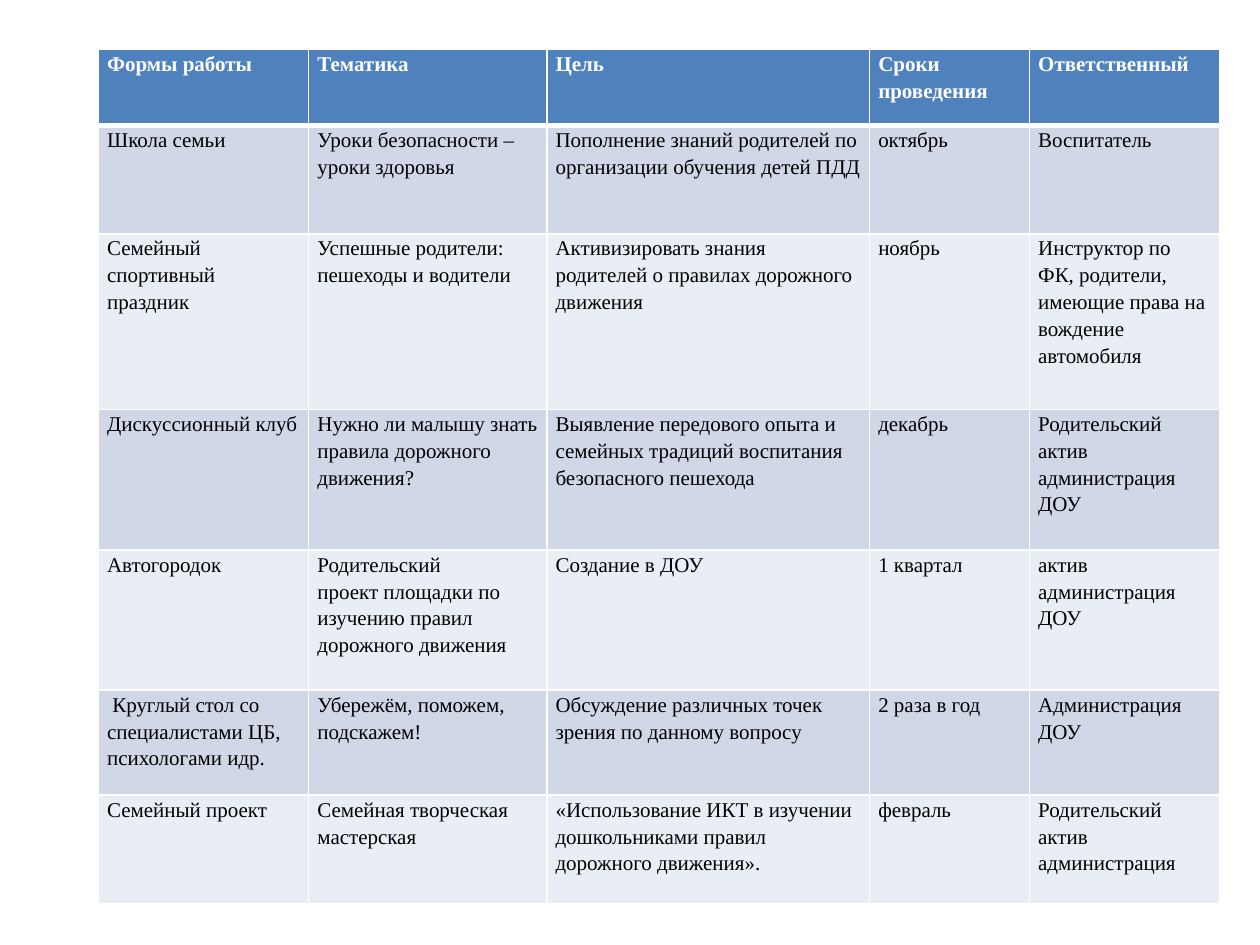
"""Build a one-slide plan of work with parents on road safety."""
from dataclasses import astuple, dataclass

import pptx
import pptx.dml.color
import pptx.oxml
import pptx.oxml.ns
import pptx.table
import pptx.util

Pt = pptx.util.Pt
RGBColor = pptx.dml.color.RGBColor

WHITE = RGBColor(0xFF, 0xFF, 0xFF)
BLACK = RGBColor(0x00, 0x00, 0x00)
HEADER = RGBColor(0x4F, 0x81, 0xBD)
BANDS = (RGBColor(0xE9, 0xED, 0xF4), RGBColor(0xD0, 0xD8, 0xE8))

FONT = "Times New Roman"
THIN, THICK = Pt(1), Pt(3)
LEFT, TOP = Pt(56.2), Pt(28.4)
COL_WIDTHS = (120.2, 136.1, 184.4, 91.4, 108.9)


@dataclass(frozen=True)
class PlanRow:
    """One row of the plan; a newline in a field starts a paragraph."""
    form: str
    topic: str
    goal: str
    term: str
    owner: str


PLAN = {
    PlanRow("Формы работы", "Тематика", "Цель", "Сроки проведения",
            "Ответственный"): 43.2,
    PlanRow("Школа семьи", "Уроки безопасности – уроки здоровья",
            "Пополнение знаний родителей по организации обучения детей ПДД",
            "октябрь", "Воспитатель"): 62,
    PlanRow("Семейный спортивный праздник",
            "Успешные родители: пешеходы и водители",
            "Активизировать знания родителей о правилах дорожного движения",
            "ноябрь",
            "Инструктор по ФК, родители, имеющие права на вождение автомобиля"): 100.3,
    PlanRow("Дискуссионный клуб",
            "Нужно ли малышу знать правила дорожного движения?",
            "Выявление передового опыта и семейных традиций воспитания "
            "безопасного пешехода",
            "декабрь", "Родительский актив администрация ДОУ"): 80.5,
    PlanRow("Автогородок",
            "Родительский\nпроект площадки по изучению правил дорожного движения",
            "Создание в ДОУ", "1 квартал", "актив администрация ДОУ"): 80,
    PlanRow(" Круглый стол со специалистами ЦБ, психологами идр.",
            "Убережём, поможем, подскажем!",
            "Обсуждение различных точек зрения по данному вопросу",
            "2 раза в год", "Администрация ДОУ"): 60,
    PlanRow("Семейный проект", "Семейная творческая мастерская",
            "«Использование ИКТ в изучении дошкольниками правил дорожного "
            "движения».",
            "февраль", "Родительский актив администрация"): 62,
}


def set_borders(cell: pptx.table._Cell, top: int, bottom: int) -> None:
    """Give the cell white borders on all sides."""
    tc_pr = cell._tc.get_or_add_tcPr()
    widths = {"L": THIN, "R": THIN, "T": top, "B": bottom}
    for side, width in widths.items():
        tc_pr.append(pptx.oxml.parse_xml(
            f'<a:ln{side} {pptx.oxml.ns.nsdecls("a")} w="{int(width)}">'
            f'<a:solidFill><a:srgbClr val="{WHITE}"/></a:solidFill>'
            f'</a:ln{side}>'))


def fill_cell(cell: pptx.table._Cell, text: str, row: int) -> None:
    """Write and style one cell according to its row."""
    is_header = row == 0
    set_borders(cell, THICK if row == 1 else THIN, THICK if is_header else THIN)
    cell.fill.solid()
    cell.fill.fore_color.rgb = HEADER if is_header else BANDS[row % 2]
    cell.margin_left = cell.margin_right = Pt(5)
    cell.margin_top = cell.margin_bottom = Pt(0)
    tf = cell.text_frame
    for i, line in enumerate(text.split("\n")):
        p = tf.add_paragraph() if i else tf.paragraphs[0]
        p.line_spacing = 1.15
        r = p.add_run()
        r.text = line
        r.font.name = FONT
        r.font.size = Pt(12)
        r.font.bold = is_header
        r.font.color.rgb = WHITE if is_header else BLACK


def add_plan(s: pptx.slide.Slide) -> None:
    """Add the plan table to the slide."""
    heights = tuple(PLAN.values())
    table = s.shapes.add_table(
        len(PLAN), len(COL_WIDTHS), LEFT, TOP,
        Pt(sum(COL_WIDTHS)), Pt(sum(heights))).table
    for column, width in zip(table.columns, COL_WIDTHS):
        column.width = Pt(width)
    for i, (plan_row, height) in enumerate(PLAN.items()):
        table.rows[i].height = Pt(height)
        for j, text in enumerate(astuple(plan_row)):
            fill_cell(table.cell(i, j), text, i)


def main() -> None:
    """Create and save the presentation."""
    prs = pptx.Presentation()
    prs.slide_width, prs.slide_height = Pt(720), Pt(540)
    s = prs.slides.add_slide(prs.slide_layouts[6])
    add_plan(s)
    prs.save("out.pptx")


if __name__ == "__main__":
    main()
